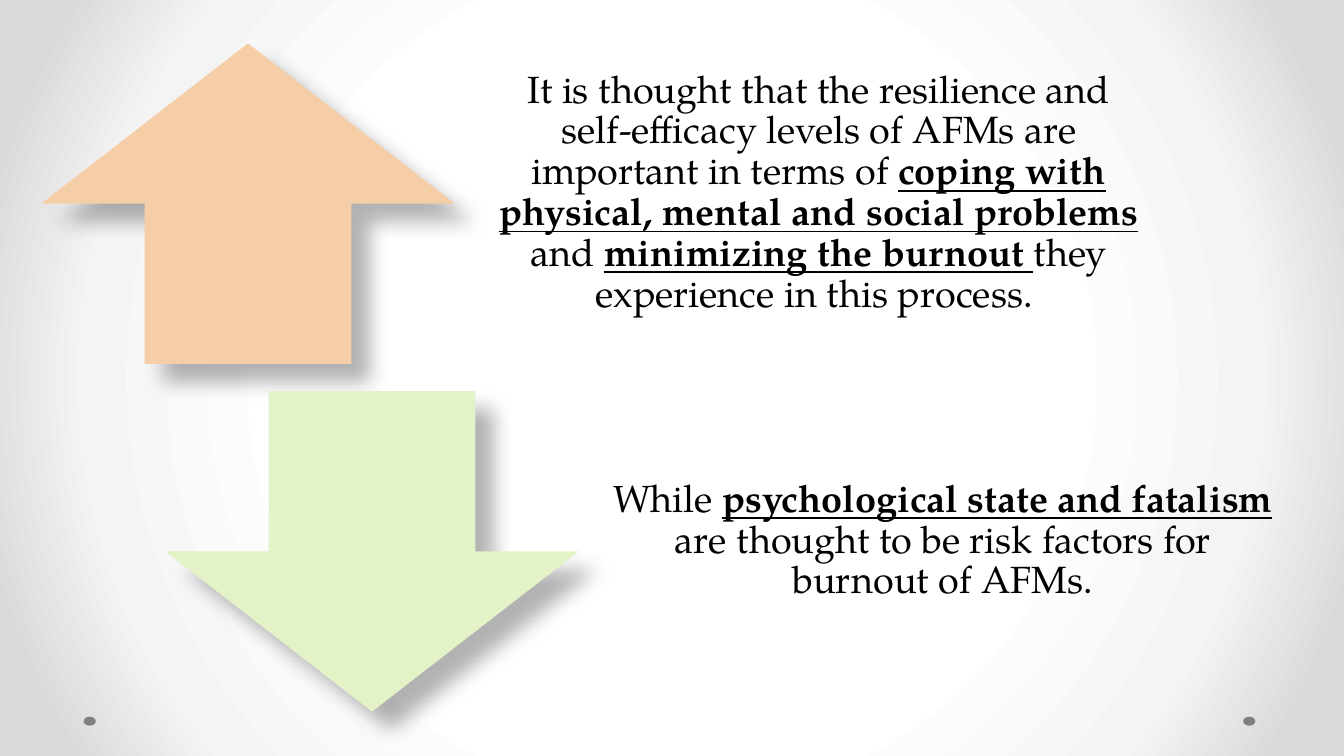
"""Build a slide with two arrows contrasting protective and risk factors."""
from pptx import Presentation
from pptx.dml.color import RGBColor
from pptx.enum.shapes import MSO_SHAPE as SHAPE
from pptx.enum.text import MSO_ANCHOR as ANCHOR, PP_ALIGN as ALIGN
from pptx.oxml import parse_xml
from pptx.oxml.ns import nsdecls
from pptx.util import Pt

PX = 9144
COLORS = {
    "up": "F5CEA7", "down": "E3F2C7", "dot": "808080", "text": "000000",
    "centre": "FFFFFF", "ring": "F4F4F4", "edge": "DADADA",
}
FONT = {"name": "TeX Gyre Pagella", "size": Pt(27)}
FRAME = {
    "word_wrap": True, "vertical_anchor": ANCHOR.MIDDLE,
    "margin_left": 21 * PX, "margin_top": 0,
    "margin_right": 21 * PX, "margin_bottom": 21 * PX,
}
PARAGRAPH = {"alignment": ALIGN.CENTER, "line_spacing": 0.9}
GRADIENT = [(50, "centre"), (76, "ring"), (92, "edge")]
ARROW_SIZE = (410, 318)
TEXT_SIZE = (696, 318)
DOT_SIZE = (12, 9)
FACTORS = [
    (SHAPE.UP_ARROW, "up", (41, 43), (464, 43), [
        ("It is thought that the resilience and self-efficacy levels of AFMs "
         "are important in terms of ", False),
        ("coping with physical, mental and social problems ", True),
        ("and ", False),
        ("minimizing the burnout ", True),
        ("they experience in this process. ", False),
    ]),
    (SHAPE.DOWN_ARROW, "down", (164, 388), (587, 388), [
        ("While ", False),
        ("psychological state and fatalism ", True),
        ("are thought to be risk factors for burnout of AFMs.", False),
    ]),
]


def apply(obj, values):
    for name, value in values.items():
        setattr(obj, name, value)


def box(pos, size):
    return [n * PX for n in pos + size]


def set_background(s):
    stops = "".join(
        f'<a:gs pos="{pos * 1000}"><a:srgbClr val="{COLORS[c]}"/></a:gs>'
        for pos, c in GRADIENT)
    s.element.cSld.insert(0, parse_xml(
        f'<p:bg {nsdecls("p", "a")}><p:bgPr><a:gradFill rotWithShape="1">'
        f'<a:gsLst>{stops}</a:gsLst><a:path path="circle">'
        '<a:fillToRect l="50000" t="50000" r="50000" b="50000"/></a:path>'
        '</a:gradFill><a:effectLst/></p:bgPr></p:bg>'))


def add_filled(s, kind, color, pos, size):
    sp = s.shapes.add_shape(kind, *box(pos, size))
    sp.shadow.inherit = False
    sp.fill.solid()
    sp.fill.fore_color.rgb = RGBColor.from_string(COLORS[color])
    sp.line.fill.background()
    return sp


def add_arrow(s, kind, color, pos):
    sp = add_filled(s, kind, color, pos, ARROW_SIZE)
    effects = sp._element.spPr.find(
        "{http://schemas.openxmlformats.org/drawingml/2006/main}effectLst")
    effects.append(parse_xml(
        f'<a:outerShdw {nsdecls("a")} blurRad="{Pt(15)}" dist="{Pt(18)}" '
        'dir="2700000" algn="tl" rotWithShape="0"><a:srgbClr val="000000">'
        '<a:alpha val="30000"/></a:srgbClr></a:outerShdw>'))


def add_statement(s, pos, runs):
    tf = s.shapes.add_textbox(*box(pos, TEXT_SIZE)).text_frame
    apply(tf, FRAME)
    p = tf.paragraphs[0]
    apply(p, PARAGRAPH)
    for text, strong in runs:
        r = p.add_run()
        r.text = text
        apply(r.font, {**FONT, "bold": strong, "underline": strong})
        r.font.color.rgb = RGBColor.from_string(COLORS["text"])


def main():
    prs = Presentation()
    apply(prs, {"slide_width": 1333 * PX, "slide_height": 750 * PX})
    s = prs.slides.add_slide(prs.slide_layouts[6])
    set_background(s)
    for x in (1233, 83):
        add_filled(s, SHAPE.OVAL, "dot", (x, 711), DOT_SIZE)
    for kind, color, arrow_pos, text_pos, runs in FACTORS:
        add_arrow(s, kind, color, arrow_pos)
        add_statement(s, text_pos, runs)
    prs.save("out.pptx")


if __name__ == "__main__":
    main()
